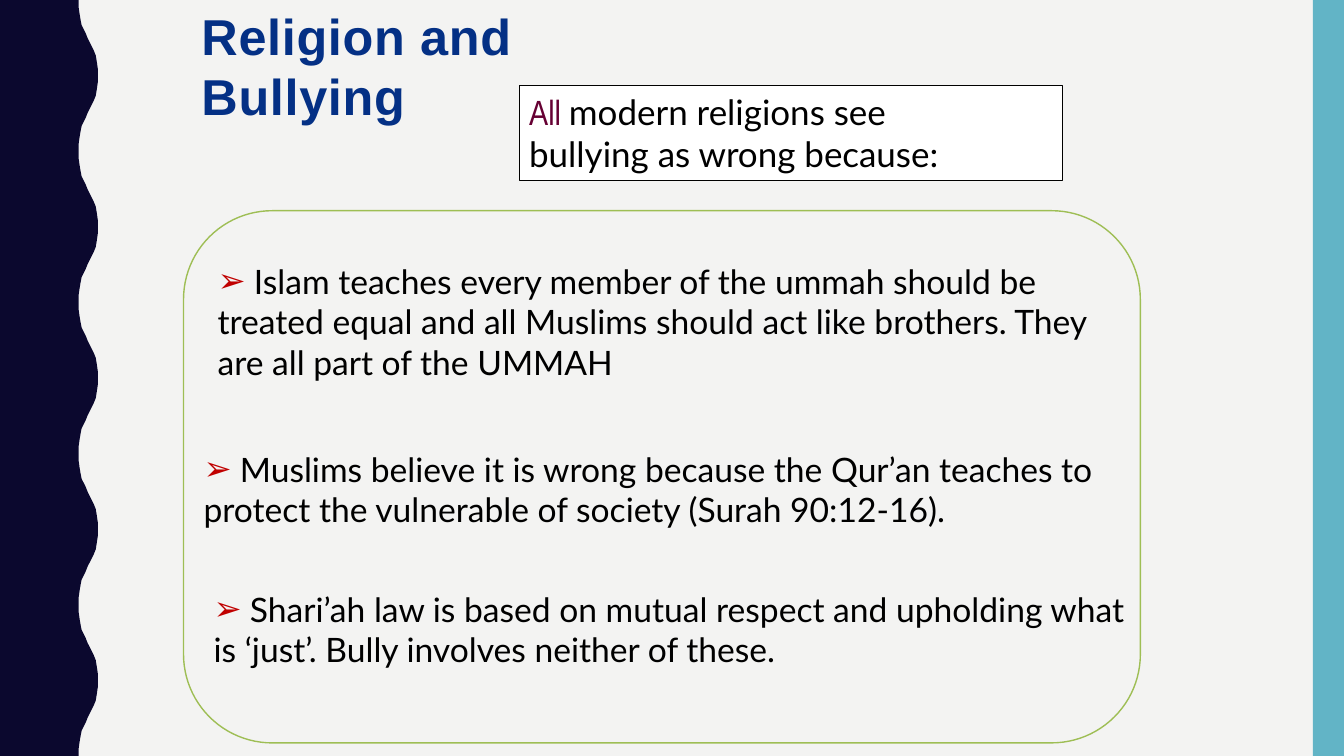
import pptx
import pptx.dml.color
import pptx.enum.shapes
import pptx.enum.text
import pptx.oxml
import pptx.oxml.ns
import pptx.util

Inches = pptx.util.Inches

PAGE_WIDTH, PAGE_HEIGHT = 13.33, 7.5
STRIPE_WIDTH = 0.31

COLORS = {
    "background": "F3F3F2", "wave": "0B082E", "stripe": "62B4C6",
    "white": "FFFFFF", "black": "000000", "frame": "9EBE55",
    "accent": "660033", "bullet": "C00000",
    "title_top": "043085", "title_bottom": "002161",
}
BODY = {"name": "Lato", "size": 24, "color": "black", "bold": False}
BODY_BOLD = {**BODY, "bold": True}
HEADING = {"name": "Arial", "size": 36, "bold": True}
INTRO = {"name": "Lato", "size": 25, "color": "black"}
INTRO_ACCENT = {"name": "Arial Narrow", "size": 25, "color": "accent"}
TITLE_STOPS = [(0.25, "title_top"), (1, "title_bottom")]

# Half a period of the wavy edge, from trough to crest; the other half mirrors it.
WAVE_PERIOD = 1.5
HALF_WAVE = [
    (0.78, 0), (0.78, 0.07), (0.79, 0.14), (0.8, 0.2), (0.81, 0.25),
    (0.83, 0.29), (0.85, 0.33), (0.87, 0.38), (0.89, 0.42), (0.91, 0.46),
    (0.93, 0.5), (0.95, 0.55), (0.96, 0.61), (0.97, 0.68), (0.97, 0.75),
]

# Left, top, height and wording of each teaching.
TEACHING_WIDTH = 9.29
TEACHINGS = [
    (2.06, 2.54, 1.31, "Islam teaches every member of the ummah should be treated equal "
     "and all Muslims should act like brothers. They are all part of the UMMAH"),
    (1.92, 4.4, 0.91, "Muslims believe it is wrong because the Qur’an teaches to protect "
     "the vulnerable of society (Surah 90:12-16)."),
    (2.02, 5.79, 0.91, "Shari’ah law is based on mutual respect and upholding what is "
     "‘just’. Bully involves neither of these."),
]


def color(name):
    return pptx.dml.color.RGBColor.from_string(COLORS[name])


def wave_edge(height):
    """Points down the wavy edge, in inches, repeating one whole period."""
    mirrored = [(x, WAVE_PERIOD - y) for x, y in HALF_WAVE[-2:0:-1]]
    periods = round(height / WAVE_PERIOD)
    edge = [(x, y + period * WAVE_PERIOD)
            for period in range(periods) for x, y in HALF_WAVE + mirrored]
    trough = HALF_WAVE[0][0]
    return edge + [(trough, height)]


class SlideBuilder:
    """Draws styled elements on one page."""

    def __init__(self, page):
        self.page = page
        page.background.fill.solid()
        page.background.fill.fore_color.rgb = color("background")

    def paint(self, shape, fill=None, line=None):
        shape.shadow.inherit = False
        if fill:
            shape.fill.solid()
            shape.fill.fore_color.rgb = color(fill)
        else:
            shape.fill.background()
        if line:
            shape.line.color.rgb = color(line)
            shape.line.width = pptx.util.Pt(1)
        else:
            shape.line.fill.background()

    def preset(self, kind, place, fill=None, line=None):
        preset = getattr(pptx.enum.shapes.MSO_SHAPE, kind)
        shape = self.page.shapes.add_shape(preset, *map(Inches, place))
        self.paint(shape, fill, line)
        return shape

    def wave(self, height):
        points = wave_edge(height) + [(0, height)]
        outline = self.page.shapes.build_freeform(0, 0)
        outline.add_line_segments([(Inches(x), Inches(y)) for x, y in points], close=True)
        self.paint(outline.convert_to_shape(), "wave")

    def text_box(self, place, wrap=True):
        box = self.page.shapes.add_textbox(*map(Inches, place))
        self.fit_to_text(box, wrap)
        return box

    def fit_to_text(self, box, wrap=True):
        formats = {
            "word_wrap": wrap,
            "auto_size": pptx.enum.text.MSO_AUTO_SIZE.SHAPE_TO_FIT_TEXT,
            "vertical_anchor": pptx.enum.text.MSO_ANCHOR.TOP,
        }
        for key, value in formats.items():
            setattr(box.text_frame, key, value)

    def paragraph(self, box, spans):
        """Fill the empty first paragraph, or add one, from (text, format) pairs."""
        frame = box.text_frame
        para = frame.add_paragraph() if frame.text else frame.paragraphs[0]
        para.alignment = pptx.enum.text.PP_ALIGN.LEFT
        for text, formats in spans:
            span = para.add_run()
            span.text = text
            for key, value in formats.items():
                if key == "color":
                    span.font.color.rgb = color(value)
                elif key == "size":
                    span.font.size = pptx.util.Pt(value)
                else:
                    setattr(span.font, key, value)
        return para

    def title(self, place, lines):
        box = self.text_box(place, wrap=False)
        for line in lines:
            span = self.paragraph(box, [(line, HEADING)]).runs[0]
            fill = span.font.fill
            fill.gradient()
            fill.gradient_angle = 270
            for stop, (position, name) in zip(fill.gradient_stops, TITLE_STOPS):
                stop.position = position
                stop.color.rgb = color(name)
            span._r.get_or_add_rPr().set("spc", "50")

    def intro(self, place, lines):
        box = self.preset("RECTANGLE", place, "white", "black")
        self.fit_to_text(box)
        for spans in lines:
            self.paragraph(box, spans)

    def teaching(self, place, text):
        """A text box with one arrow-bulleted paragraph."""
        para = self.paragraph(self.text_box(place), [(" ", BODY_BOLD), (text, BODY)])
        properties = para._p.get_or_add_pPr()
        for key in ("marL", "indent"):
            properties.set(key, "0")
        namespace = pptx.oxml.ns.nsdecls("a")
        for xml in (
            f'<a:buClr {namespace}><a:srgbClr val="{COLORS["bullet"]}"/></a:buClr>',
            f'<a:buFont {namespace} typeface="Arial"/>',
            f'<a:buChar {namespace} char="➢"/>',
        ):
            properties.append(pptx.oxml.parse_xml(xml))


def main():
    deck = pptx.Presentation()
    deck.slide_width, deck.slide_height = Inches(PAGE_WIDTH), Inches(PAGE_HEIGHT)
    builder = SlideBuilder(deck.slides.add_slide(deck.slide_layouts[6]))

    builder.wave(PAGE_HEIGHT)
    stripe_place = (PAGE_WIDTH - STRIPE_WIDTH, 0, STRIPE_WIDTH, PAGE_HEIGHT)
    builder.preset("RECTANGLE", stripe_place, fill="stripe")

    builder.intro((5.15, 0.85, 5.39, 0.94), [
        [("All ", INTRO_ACCENT), ("modern religions see", INTRO)],
        [("bullying as wrong because:", INTRO)],
    ])
    builder.title((1.9, 0, 3.46, 1.31), ["Religion and", "Bullying"])
    for left, top, height, text in TEACHINGS:
        builder.teaching((left, top, TEACHING_WIDTH, height), text)
    builder.preset("ROUNDED_RECTANGLE", (1.82, 2.09, 9.49, 5.28), line="frame")

    deck.save("out.pptx")


if __name__ == "__main__":
    main()
